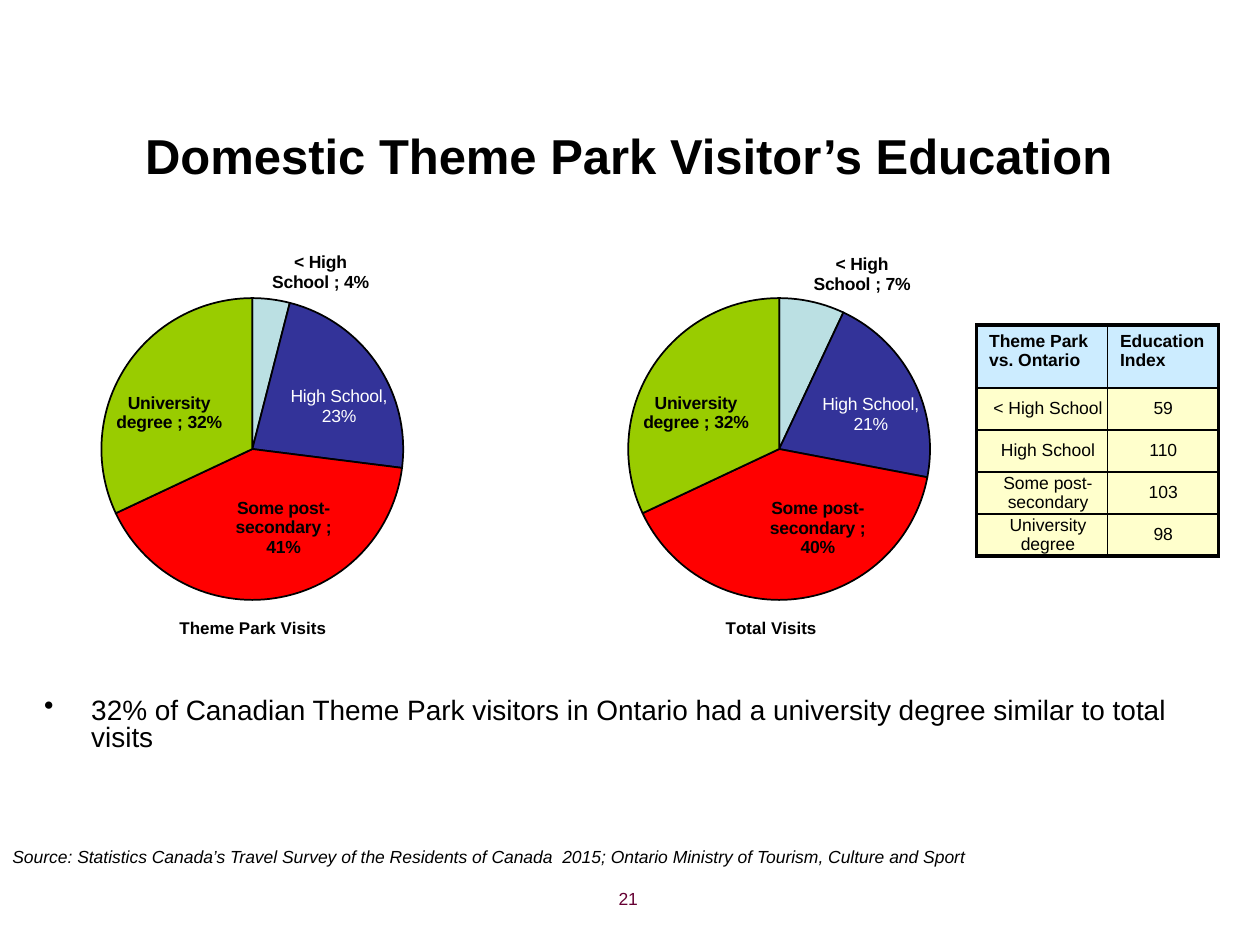
from lxml import etree
from pptx import Presentation
from pptx.chart.data import CategoryChartData
from pptx.dml.color import RGBColor
from pptx.enum.chart import XL_CHART_TYPE, XL_LABEL_POSITION
from pptx.enum.text import MSO_ANCHOR, PP_ALIGN
from pptx.oxml.ns import qn
from pptx.util import Cm, Pt

PIE = XL_CHART_TYPE.PIE
CENTER_LABEL, OUTSIDE_LABEL = XL_LABEL_POSITION.CENTER, XL_LABEL_POSITION.OUTSIDE_END
TOP, MIDDLE = MSO_ANCHOR.TOP, MSO_ANCHOR.MIDDLE
LEFT, CENTER, RIGHT = PP_ALIGN.LEFT, PP_ALIGN.CENTER, PP_ALIGN.RIGHT

BLACK = RGBColor(0x00, 0x00, 0x00)
WHITE = RGBColor(0xFF, 0xFF, 0xFF)
PLUM = RGBColor(0x66, 0x00, 0x33)
HEADER_BLUE = RGBColor(0xCC, 0xEC, 0xFF)
BODY_CREAM = RGBColor(0xFF, 0xFF, 0xCC)
SLICES = [RGBColor(0xBB, 0xE0, 0xE3), RGBColor(0x33, 0x33, 0x99),
          RGBColor(0xFF, 0x00, 0x00), RGBColor(0x99, 0xCC, 0x00)]

FONT = "Arial"
LEVELS = ["< High School ", "High School", "Some post-secondary ", "University degree "]
HIGH_SCHOOL = 1
INDEX_ROWS = [("Theme Park vs. Ontario", "Education Index"), ("< High School", "59"),
              ("High School", "110"), ("Some post-secondary", "103"),
              ("University degree", "98")]


def style_font(font, size, color=BLACK, bold=False, italic=False):
    """Apply the slide's typeface with the given look."""
    font.name, font.size = FONT, Pt(size)
    font.bold, font.italic = bold, italic
    font.color.rgb = color


def add_text(page, box, text, size, align=LEFT, anchor=TOP, **look):
    """Place a wrapped one-paragraph text box and return its paragraph."""
    frame = page.shapes.add_textbox(*map(Cm, box)).text_frame
    frame.word_wrap = True
    frame.vertical_anchor = anchor
    para = frame.paragraphs[0]
    para.text, para.alignment = text, align
    style_font(para.font, size, **look)
    return para


def add_bullet(page, box, text):
    """Place a bulleted statement with a hanging indent."""
    para = add_text(page, box, text, 16)
    para.line_spacing = 0.8
    properties = para._p.get_or_add_pPr()
    properties.set("marL", str(Cm(0.95)))
    properties.set("indent", str(Cm(-0.95)))
    bullet = etree.Element(qn("a:buChar"), char="•")
    properties.find(qn("a:lnSpc")).addnext(bullet)


def set_layout(parent, index, **values):
    """Give a chart part a manual layout, in fractions of the chart."""
    for old in parent.findall(qn("c:layout")):
        parent.remove(old)
    layout = etree.Element(qn("c:layout"))
    manual = etree.SubElement(layout, qn("c:manualLayout"))
    for tag, value in values.items():
        etree.SubElement(manual, qn(f"c:{tag}"), val=str(value))
    parent.insert(index, layout)


def label_slice(point, text, position, shift):
    """Label a slice, with fixed text if given, else with category and value."""
    label = point.data_label
    if text:
        para = label.text_frame.paragraphs[0]
        para.text = text
        style_font(para.font, 10, WHITE)
    else:
        style_font(label.font, 10, bold=True)
    label.position = position
    element = label._get_or_add_dLbl()
    set_layout(element, 1, x=shift[0], y=shift[1])
    element.find(qn("c:showCatName")).set("val", "1")
    etree.SubElement(element, qn("c:separator")).text = "; "
    if not text:
        number_format = etree.Element(qn("c:numFmt"), formatCode="0%", sourceLinked="0")
        element.insert(2, number_format)


def add_pie(page, box, title, title_x, values, shifts):
    """Place a labelled education pie with its title underneath."""
    data = CategoryChartData(number_format="0%")
    data.categories = LEVELS
    data.add_series("Series 1", values)
    chart = page.shapes.add_chart(PIE, *map(Cm, box), data).chart
    chart.has_legend = False
    style_font(chart.font, 10, bold=True)

    chart.has_title = True
    heading = chart.chart_title.text_frame.paragraphs[0]
    heading.text = title
    style_font(heading.font, 9.7, bold=True)
    set_layout(chart.chart_title._element, 1, xMode="edge", yMode="edge", x=title_x, y=0.86)

    plot = chart.plots[0]
    plot.vary_by_categories = True
    set_layout(plot._element.getparent(), 0, layoutTarget="inner", xMode="edge",
               yMode="edge", x=0.126, y=0.151, w=0.621, h=0.68)
    series = plot.series[0]
    for index, (color, shift) in enumerate(zip(SLICES, shifts)):
        point = series.points[index]
        point.format.fill.solid()
        point.format.fill.fore_color.rgb = color
        point.format.line.color.rgb = BLACK
        point.format.line.width = Pt(1)
        text = f"High School, {values[index]:.0%}" if index == HIGH_SCHOOL else None
        label_slice(point, text, CENTER_LABEL if index else OUTSIDE_LABEL, shift)
    for leader in series._element.iter(qn("c:showLeaderLines")):
        leader.set("val", "0")


def draw_border(cell, side, width):
    """Draw one black side of a cell."""
    line = etree.Element(qn(f"a:{side}"), w=str(Pt(width)))
    fill = etree.SubElement(line, qn("a:solidFill"))
    etree.SubElement(fill, qn("a:srgbClr"), val=str(BLACK))
    cell._tc.get_or_add_tcPr().append(line)


def fill_cell(cell, color):
    """Fill a cell with a half-transparent colour."""
    cell.fill.solid()
    cell.fill.fore_color.rgb = color
    tint = cell._tc.tcPr.find(f".//{qn('a:srgbClr')}")
    etree.SubElement(tint, qn("a:alpha"), val="50000")


def add_index_table(page, box):
    """Place the education index table with a heavy outer frame."""
    last_row, last_column = len(INDEX_ROWS) - 1, len(INDEX_ROWS[0]) - 1
    table = page.shapes.add_table(last_row + 1, last_column + 1, *map(Cm, box)).table
    table.first_row = table.horz_banding = False
    for column, width in zip(table.columns, (2.64, box[2] - 2.64)):
        column.width = Cm(width)
    for r, texts in enumerate(INDEX_ROWS):
        header = r == 0
        table.rows[r].height = Cm(1.27 if header else (box[3] - 1.27) / last_row)
        for c, text in enumerate(texts):
            cell = table.cell(r, c)
            cell.margin_left = Cm(0.25 if header else 0 if c else 0.23)
            cell.margin_right = Cm(0.25 if header else 0)
            cell.margin_top = cell.margin_bottom = Cm(0.13 if header else 0)
            cell.vertical_anchor = TOP if header else MIDDLE
            para = cell.text_frame.paragraphs[0]
            para.text, para.alignment = text, LEFT if header else CENTER
            style_font(para.font, 10, bold=header)
            outer = {"lnL": c == 0, "lnR": c == last_column,
                     "lnT": header, "lnB": r == last_row}
            for side, heavy in outer.items():
                draw_border(cell, side, 2.25 if heavy else 1)
            fill_cell(cell, HEADER_BLUE if header else BODY_CREAM)


def build_education_page(page):
    """Lay out the title, pies, index table, finding and source."""
    add_text(page, (0.43, 2.18, 24.49, 1.9), "Domestic Theme Park Visitor’s Education",
             28, CENTER, MIDDLE, bold=True)
    add_pie(page, (0.81, 4.65, 9.8, 8.97), "Theme Park Visits", 0.28,
            (0.04, 0.23, 0.41, 0.32), ((0, 0), (0.05, 0), (0.04, 0.01), (-0.04, 0.01)))
    add_pie(page, (11.43, 4.65, 9.8, 8.97), "Total Visits", 0.32,
            (0.07, 0.21, 0.4, 0.32), ((0, 0), (0.05, 0), (0.06, 0.01), (-0.04, 0.01)))
    add_index_table(page, (19.69, 6.55, 4.88, 4.65))
    add_bullet(page, (0.64, 13.97, 24.13, 3.18),
               "32% of Canadian Theme Park visitors in Ontario had a university degree "
               "similar to total visits")
    add_text(page, (0, 16.94, 24.89, 0.69),
             "Source: Statistics Canada’s Travel Survey of the Residents of Canada  2015; "
             "Ontario Ministry of Tourism, Culture and Sport", 10, italic=True)
    add_text(page, (7.19, 17.78, 5.92, 0.89), "21", 10, RIGHT, color=PLUM)


def main():
    """Build and save the deck."""
    deck = Presentation()
    deck.slide_width, deck.slide_height = Cm(25.4), Cm(19.05)
    build_education_page(deck.slides.add_slide(deck.slide_layouts[6]))
    deck.save("out.pptx")


if __name__ == "__main__":
    main()
